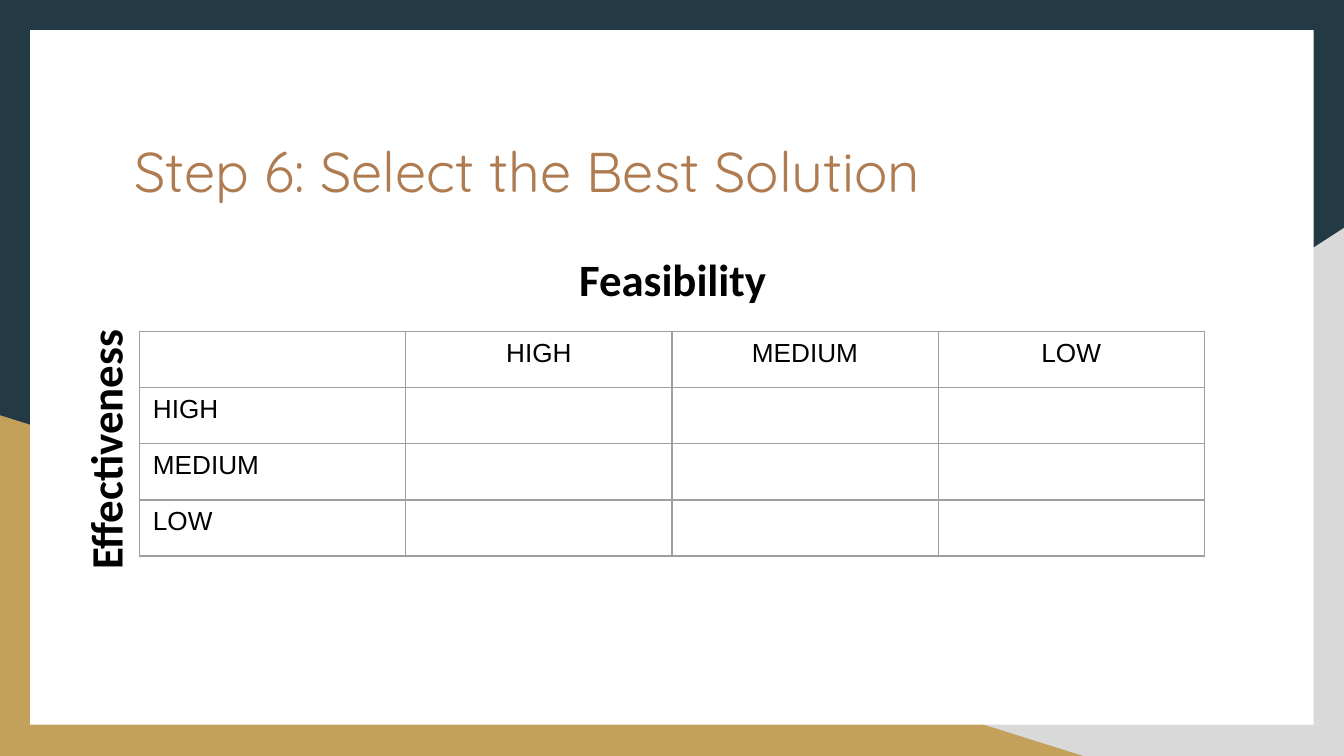
from lxml import etree
from pptx import Presentation
from pptx.dml.color import RGBColor
from pptx.enum.shapes import MSO_SHAPE
from pptx.enum.text import MSO_ANCHOR, MSO_AUTO_SIZE, PP_ALIGN
from pptx.oxml.ns import qn
from pptx.util import Cm, Pt

TRIANGLE, RECT = MSO_SHAPE.RIGHT_TRIANGLE, MSO_SHAPE.RECTANGLE
TOP, NO_FIT = MSO_ANCHOR.TOP, MSO_AUTO_SIZE.NONE
LEFT, CENTER = PP_ALIGN.LEFT, PP_ALIGN.CENTER
NAVY = RGBColor(0x23, 0x3A, 0x44)
GRAY = RGBColor(0xD9, 0xD9, 0xD9)
GOLD = RGBColor(0xC4, 0xA1, 0x5A)
WHITE = RGBColor(0xFF, 0xFF, 0xFF)
BROWN = RGBColor(0xAF, 0x7B, 0x51)
BLACK = RGBColor(0, 0, 0)
BORDER = RGBColor(0x9E, 0x9E, 0x9E)
LEVELS = ["HIGH", "MEDIUM", "LOW"]


def write(tf, text, font, size, color, align=LEFT, bold=False):
    p = tf.paragraphs[0]
    p.alignment = align
    r = p.add_run()
    r.text = text
    r.font.name = font
    r.font.size = Pt(size)
    r.font.bold = bold
    r.font.color.rgb = color


def set_frame(tf):
    tf.word_wrap = True
    tf.auto_size = NO_FIT
    tf.vertical_anchor = TOP
    tf.margin_left = tf.margin_right = Cm(0.25)
    tf.margin_top = tf.margin_bottom = Cm(0.25)


prs = Presentation()
prs.slide_width, prs.slide_height = Cm(25.4), Cm(14.29)
s = prs.slides.add_slide(prs.slide_layouts[5])
s.background.fill.solid()
s.background.fill.fore_color.rgb = NAVY

for kind, x, y, w, h, color, flip in [
    (TRIANGLE, 9.96, 4.31, 15.44, 9.98, GRAY, True),
    (TRIANGLE, 0, 7.85, 20.47, 6.44, GOLD, False),
    (RECT, 0.57, 0.57, 24.26, 13.13, WHITE, False),
]:
    sp = s.shapes.add_shape(kind, Cm(x), Cm(y), Cm(w), Cm(h))
    sp.shadow.inherit = False
    sp.fill.solid()
    sp.fill.fore_color.rgb = color
    sp.line.fill.background()
    if flip:
        sp._element.spPr.xfrm.set("flipH", "1")

title = s.shapes.title
s.shapes._spTree.append(title._element)
title.left, title.top = Cm(2.29), Cm(2.34)
title.width, title.height = Cm(20.85), Cm(2.64)
set_frame(title.text_frame)
write(title.text_frame, "Step 6: Select the Best Solution", "Quicksand", 30, BROWN)

frame = s.shapes.add_table(4, 4, Cm(2.64), Cm(6.27), Cm(20.12), Cm(4.24))
table = frame.table
table.first_row = table.horz_banding = False
for col in table.columns:
    col.width = Cm(5.03)
for row in table.rows:
    row.height = Cm(1.06)
for i, level in enumerate(LEVELS, 1):
    write(table.cell(0, i).text_frame, level, "Arial", 14, BLACK, CENTER)
    write(table.cell(i, 0).text_frame, level, "Arial", 14, BLACK)
for cell in table.iter_cells():
    cell.margin_left = cell.margin_right = Cm(0.25)
    cell.margin_top = cell.margin_bottom = Cm(0.13)
    cell.fill.background()
    tcPr = cell._tc.get_or_add_tcPr()
    for i, side in enumerate(["a:lnL", "a:lnR", "a:lnT", "a:lnB"]):
        ln = etree.Element(qn(side), w=str(Pt(0.75)))
        fill = etree.SubElement(ln, qn("a:solidFill"))
        etree.SubElement(fill, qn("a:srgbClr"), val=str(BORDER))
        tcPr.insert(i, ln)

for text, x, y, w, angle, align in [
    ("Feasibility", 10.34, 4.5, 4.75, 0, CENTER),
    ("Effectiveness", -0.56, 7.72, 5.08, 270, LEFT),
]:
    label = s.shapes.add_textbox(Cm(x), Cm(y), Cm(w), Cm(1.52))
    label.rotation = angle
    set_frame(label.text_frame)
    write(label.text_frame, text, "Calibri", 24, BLACK, align, True)

prs.save("out.pptx")
